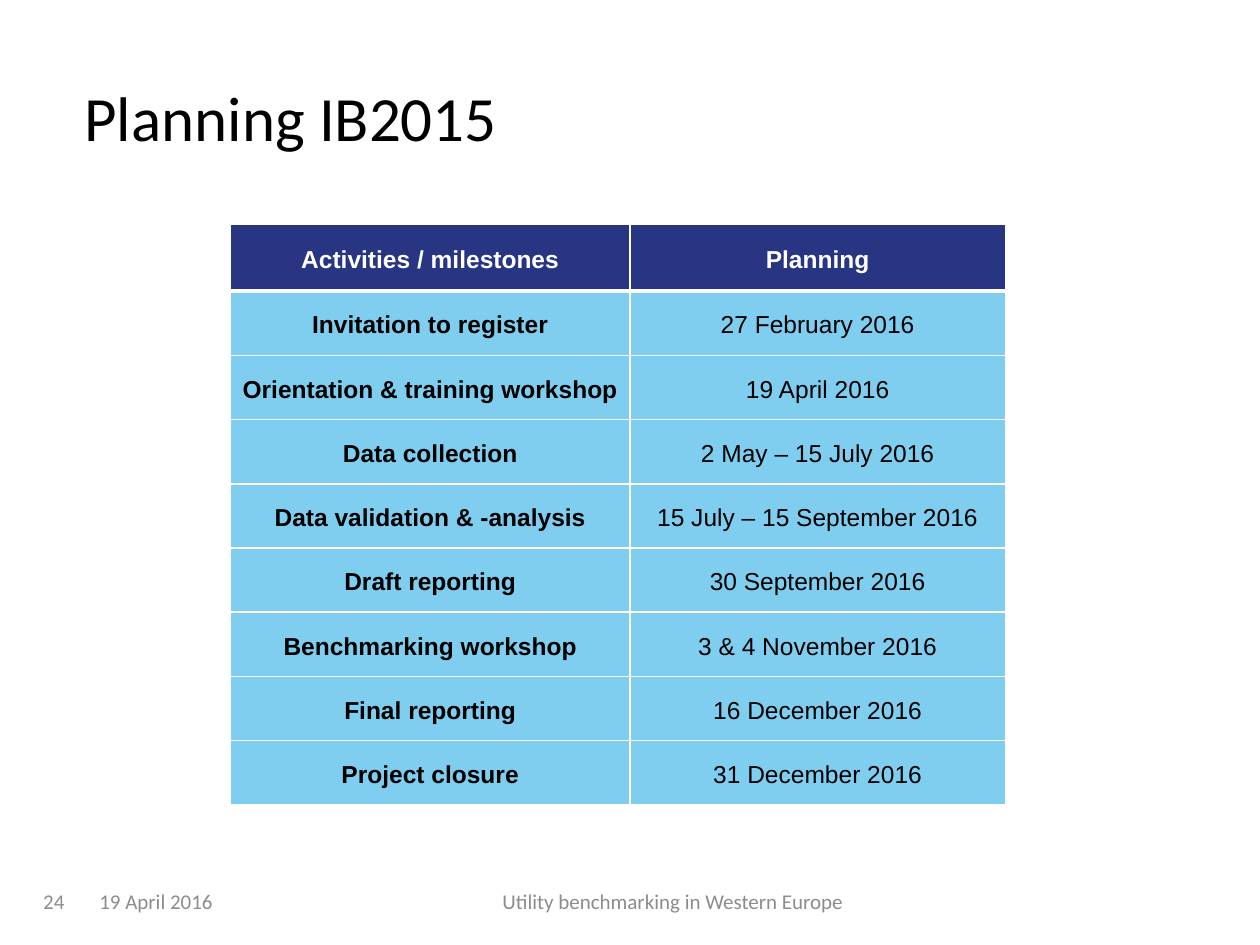
from dataclasses import dataclass

from lxml import etree
from pptx import Presentation
from pptx.dml.color import RGBColor
from pptx.enum.text import MSO_ANCHOR, PP_ALIGN
from pptx.oxml.ns import qn
from pptx.util import Pt

LEFT, CENTER, RIGHT = PP_ALIGN.LEFT, PP_ALIGN.CENTER, PP_ALIGN.RIGHT
MIDDLE = MSO_ANCHOR.MIDDLE
EMU_PER_PX = 9144  # 100 px to the inch

BLACK, WHITE, GREY = "000000", "FFFFFF", "8C8C8C"
NAVY, SKY = "283583", "009FE3"


@dataclass
class FooterItem:
    text: str
    left: int
    width: int
    align: PP_ALIGN


FOOTER_TOP, FOOTER_HEIGHT = 695, 40
FOOTER = [
    FooterItem("19 April 2016", 69, 233, LEFT),
    FooterItem("Utility benchmarking in Western Europe", 318, 432, CENTER),
    FooterItem("24", 11, 50, RIGHT),
]

COLUMN_WIDTHS = [317, 298]
HEADER_HEIGHT, ROW_HEIGHT = 53, 51
SCHEDULE = [
    ("Activities / milestones", "Planning"),
    ("Invitation to register", "27 February 2016"),
    ("Orientation & training workshop", "19 April 2016"),
    ("Data collection", "2 May – 15 July 2016"),
    ("Data validation & -analysis", "15 July – 15 September 2016"),
    ("Draft reporting", "30 September 2016"),
    ("Benchmarking workshop", "3 & 4 November 2016"),
    ("Final reporting", "16 December 2016"),
    ("Project closure", "31 December 2016"),
]


def px(n: int) -> int:
    return n * EMU_PER_PX


def rgb(color: str) -> RGBColor:
    return RGBColor.from_string(color)


def add_text(tf, text: str, size: int, font: str, color: str,
             align: PP_ALIGN, bold: bool = False):
    p = tf.paragraphs[0]
    p.alignment = align
    r = p.add_run()
    r.text = text
    r.font.size, r.font.name, r.font.bold = Pt(size), font, bold
    r.font.color.rgb = rgb(color)
    return p


def add_footer_item(s, item: FooterItem) -> None:
    tf = s.shapes.add_textbox(px(item.left), px(FOOTER_TOP), px(item.width),
                              px(FOOTER_HEIGHT)).text_frame
    tf.word_wrap = True
    tf.vertical_anchor = MIDDLE
    add_text(tf, item.text, 12, "Calibri", GREY, item.align)


def set_borders(cell, top: int, bottom: int) -> None:
    tc_pr = cell._tc.get_or_add_tcPr()
    for side, width in (("L", 1), ("R", 1), ("T", top), ("B", bottom)):
        ln = etree.SubElement(tc_pr, qn(f"a:ln{side}"), w=str(Pt(width)))
        fill = etree.SubElement(ln, qn("a:solidFill"))
        etree.SubElement(fill, qn("a:srgbClr"), val=WHITE)


def set_fill(cell, color: str, opacity: int) -> None:
    cell.fill.solid()
    cell.fill.fore_color.rgb = rgb(color)
    if opacity < 100:
        clr = cell._tc.tcPr.find(f"{qn('a:solidFill')}/{qn('a:srgbClr')}")
        etree.SubElement(clr, qn("a:alpha"), val=str(opacity * 1000))


def add_schedule(s, left: int, top: int) -> None:
    heights = [HEADER_HEIGHT] + [ROW_HEIGHT] * (len(SCHEDULE) - 1)
    table = s.shapes.add_table(len(SCHEDULE), len(COLUMN_WIDTHS), px(left), px(top),
                               px(sum(COLUMN_WIDTHS)), px(sum(heights))).table
    for column, width in zip(table.columns, COLUMN_WIDTHS):
        column.width = px(width)
    for i, (height, texts) in enumerate(zip(heights, SCHEDULE)):
        table.rows[i].height = px(height)
        header = i == 0
        for j, text in enumerate(texts):
            cell = table.cell(i, j)
            cell.vertical_anchor = MIDDLE
            cell.margin_left = cell.margin_right = px(5)
            cell.margin_top = cell.margin_bottom = 0
            # A thick rule separates the header from the body
            set_borders(cell, top=3 if i == 1 else 1, bottom=3 if header else 1)
            set_fill(cell, NAVY if header else SKY, 100 if header else 50)
            p = add_text(cell.text_frame, text, 14, "Arial",
                         WHITE if header else BLACK, CENTER, bold=header or j == 0)
            p.line_spacing = 1.17


def main() -> None:
    prs = Presentation()
    prs.slide_width, prs.slide_height = px(1000), px(750)
    s = prs.slides.add_slide(prs.slide_layouts[5])

    # Title
    title = s.shapes.title
    title.left, title.top, title.width, title.height = px(57), px(30), px(900), px(125)
    title.text_frame.vertical_anchor = MIDDLE
    add_text(title.text_frame, "Planning IB2015", 36, "Calibri", BLACK, LEFT)

    # Footer
    for item in FOOTER:
        add_footer_item(s, item)

    # Schedule table
    add_schedule(s, left=183, top=178)

    prs.save("out.pptx")


if __name__ == "__main__":
    main()
